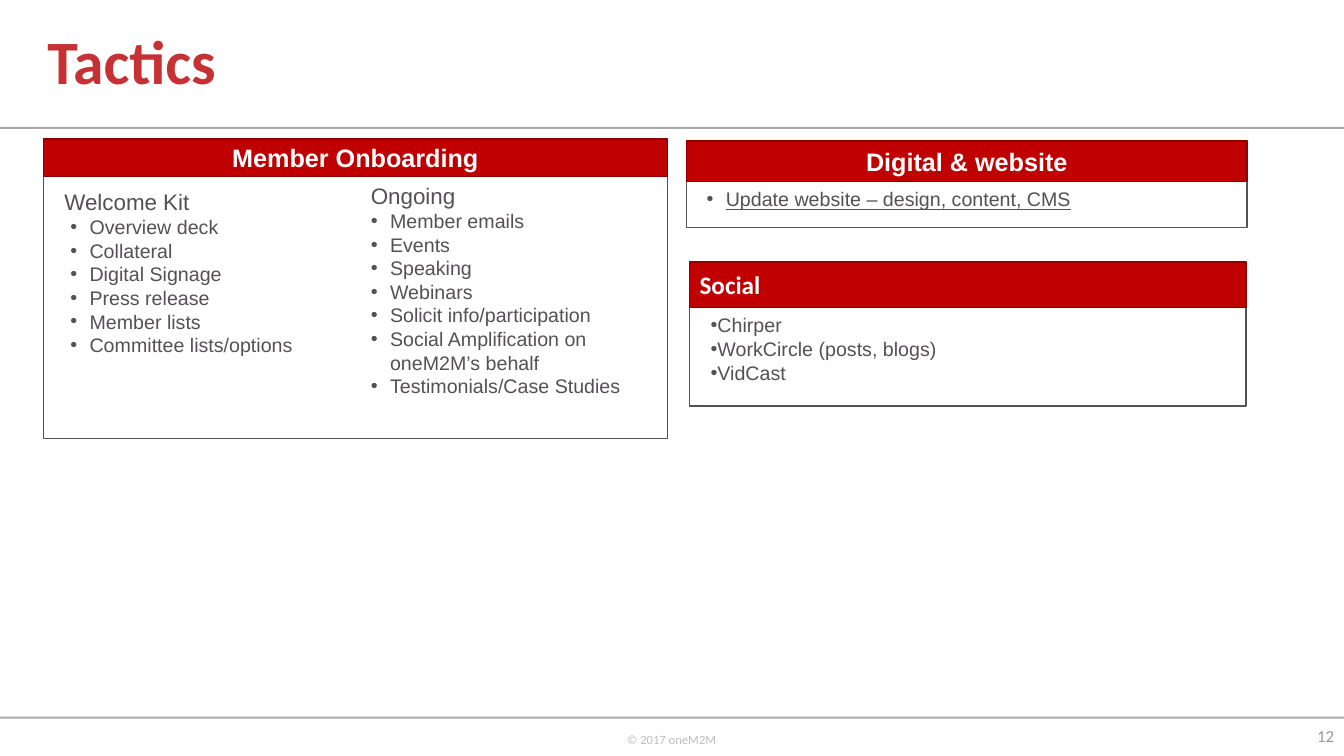
from lxml import etree
from pptx import Presentation
from pptx.dml.color import RGBColor
from pptx.enum import shapes, text
from pptx.oxml import ns
from pptx.util import Inches, Pt

RED = RGBColor(0xC0, 0x00, 0x00)
DARK_RED = RGBColor(0x8E, 0x00, 0x00)
TITLE_RED = RGBColor(0xC6, 0x31, 0x33)
GREY = RGBColor(0x54, 0x50, 0x54)
RULE_GREY = RGBColor(0xA7, 0xA9, 0xAC)
NUMBER_GREY = RGBColor(0x99, 0x98, 0x99)
FOOTER_GREY = RGBColor(0xBF, 0xBF, 0xBF)
WHITE = RGBColor(0xFF, 0xFF, 0xFF)

LEFT, CENTER, RIGHT = text.PP_ALIGN.LEFT, text.PP_ALIGN.CENTER, text.PP_ALIGN.RIGHT
HANGING = 0.19
SLIDE_WIDTH, SLIDE_HEIGHT = 13.33, 7.5
RULE_TOPS = [1.26, 7.11]

TITLE = "Tactics"
COPYRIGHT = "© 2017 oneM2M"
PAGE = "12"

PANELS = [
    {
        "heading": "Social", "font": "Calibri", "align": LEFT,
        "frame": (6.84, 2.6, 5.52, 1.43), "band": (6.84, 2.6, 5.52, 0.45),
        "lists": [
            {"area": (6.95, 3.06, 5.31, 0.81), "margin": 0,
             "items": ["Chirper", "WorkCircle (posts, blogs)", "VidCast"]},
        ],
    },
    {
        "heading": "Member Onboarding", "font": "Arial", "align": CENTER,
        "frame": (0.43, 1.4, 6.19, 2.95), "band": (0.43, 1.38, 6.19, 0.37),
        "lists": [
            {"area": (0.54, 1.82, 5.95, 1.78), "margin": 0.25, "lead": "Welcome Kit",
             "items": ["Overview deck", "Collateral", "Digital Signage", "Press release",
                       "Member lists", "Committee lists/options"]},
            {"area": (3.58, 1.76, 2.92, 2.52), "margin": 0.19, "lead": "Ongoing",
             "items": ["Member emails", "Events", "Speaking", "Webinars",
                       "Solicit info/participation",
                       "Social Amplification on oneM2M’s behalf",
                       "Testimonials/Case Studies"]},
        ],
    },
    {
        "heading": "Digital & website", "font": "Arial", "align": CENTER,
        "frame": (6.81, 1.4, 5.56, 0.86), "band": (6.81, 1.4, 5.56, 0.4),
        "lists": [
            {"area": (6.91, 1.81, 5.35, 0.34), "margin": 0.19, "underline": True,
             "items": ["Update website – design, content, CMS"]},
        ],
    },
]


def inches(area):
    return [Inches(length) for length in area]


def write(paragraph, words, size, font, color, align=LEFT, bold=None):
    paragraph.text = words
    paragraph.alignment = align
    paragraph.font.size = Pt(size)
    paragraph.font.name = font
    paragraph.font.color.rgb = color
    paragraph.font.bold = bold


def add_bullet(paragraph, margin):
    properties = paragraph._p.get_or_add_pPr()
    properties.set("marL", str(Inches(margin)))
    properties.set("indent", str(Inches(-HANGING)))
    bullet_font = etree.SubElement(properties, ns.qn("a:buFont"))
    bullet_font.set("typeface", "Arial")
    etree.SubElement(properties, ns.qn("a:buChar")).set("char", "•")


def add_block(parent, area, fill, line=None):
    block = parent.add_shape(shapes.MSO_SHAPE.RECTANGLE, *inches(area))
    block.shadow.inherit = False
    block.fill.solid()
    block.fill.fore_color.rgb = fill
    if line is None:
        block.line.fill.background()
    else:
        block.line.color.rgb = line
        block.line.width = Pt(1)
    return block


def add_words(parent, area, wrap=True):
    frame = parent.add_textbox(*inches(area)).text_frame
    frame.word_wrap = wrap
    return frame


def add_list(parent, column):
    frame = add_words(parent, column["area"])
    frame.auto_size = text.MSO_AUTO_SIZE.SHAPE_TO_FIT_TEXT
    paragraph = frame.paragraphs[0]
    if "lead" in column:
        write(paragraph, column["lead"], 16, "Arial", GREY)
        paragraph = frame.add_paragraph()
    for index, item in enumerate(column["items"]):
        if index:
            paragraph = frame.add_paragraph()
        add_bullet(paragraph, column["margin"])
        write(paragraph, item, 14, "Arial", GREY)
        if column.get("underline"):
            paragraph.runs[0].font.underline = True


def add_panel(slide, panel):
    group = slide.shapes.add_group_shape().shapes
    add_block(group, panel["frame"], WHITE, GREY)
    heading = add_block(group, panel["band"], RED, DARK_RED).text_frame
    heading.vertical_anchor = text.MSO_ANCHOR.MIDDLE
    write(heading.paragraphs[0], panel["heading"], 18, panel["font"], WHITE,
          panel["align"], True)
    for column in panel["lists"]:
        add_list(group, column)


def main():
    deck = Presentation()
    deck.slide_width, deck.slide_height = Inches(SLIDE_WIDTH), Inches(SLIDE_HEIGHT)
    slide = deck.slides.add_slide(deck.slide_layouts[5])

    title = slide.shapes.title
    title.left, title.top, title.width, title.height = inches((0.37, 0, 8.59, 1.28))
    title.text_frame.auto_size = text.MSO_AUTO_SIZE.NONE
    title.text_frame.vertical_anchor = text.MSO_ANCHOR.MIDDLE
    write(title.text_frame.paragraphs[0], TITLE, 44, "Calibri", TITLE_RED, bold=True)
    title.text_frame.paragraphs[0].line_spacing = 0.9

    for top in RULE_TOPS:
        add_block(slide.shapes, (0, top, SLIDE_WIDTH, 0.02), RULE_GREY)

    copyright_line = add_words(slide.shapes, (6.12, 7.21, 1.1, 0.4), wrap=False)
    write(copyright_line.paragraphs[0], COPYRIGHT, 9, "Calibri", FOOTER_GREY)

    page_number = add_words(slide.shapes, (12.79, 7.1, 0.54, 0.4))
    page_number.vertical_anchor = text.MSO_ANCHOR.MIDDLE
    write(page_number.paragraphs[0], PAGE, 12, "Calibri", NUMBER_GREY, RIGHT)

    for panel in PANELS:
        add_panel(slide, panel)
    deck.save("out.pptx")


if __name__ == "__main__":
    main()
